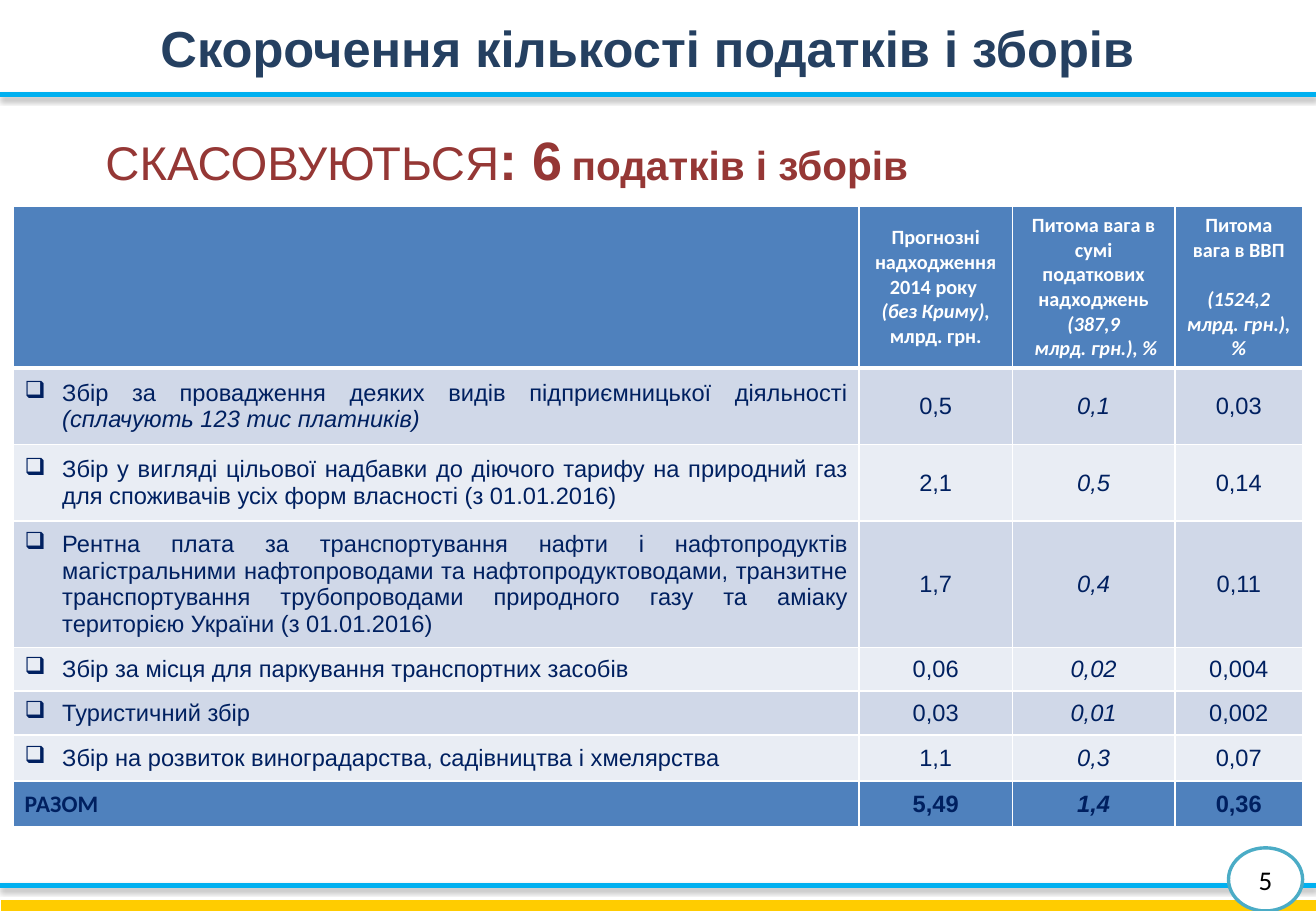
from dataclasses import dataclass

from lxml.etree import SubElement
from pptx import Presentation
from pptx.dml.color import RGBColor
from pptx.enum.shapes import MSO_CONNECTOR as Connector, MSO_SHAPE as Preset
from pptx.enum.text import MSO_ANCHOR as Anchor, MSO_AUTO_SIZE as AutoSize, PP_ALIGN as Align
from pptx.oxml.ns import qn
from pptx.util import Emu, Inches, Pt


@dataclass(frozen=True)
class Theme:
    sans: str = "Arial"
    table_head: str = "Calibri"
    navy: str = "254061"
    maroon: str = "953735"
    ink: str = "002060"
    sky: str = "00B0F0"
    yellow: str = "FFCC00"
    teal: str = "4BACC6"
    blue: str = "4F81BD"
    bands: tuple[str, str] = ("D0D8E8", "E9EDF4")
    white: str = "FFFFFF"
    black: str = "000000"
    title: int = 30
    count: int = 32
    lead: int = 28
    subject: int = 24
    gap: int = 20
    page: int = 16
    body: int = 14
    head: int = 12


THEME = Theme()
WIDTH, HEIGHT = Inches(10.83), Inches(7.5)


@dataclass(frozen=True)
class Style:
    size: int
    color: str
    font: str = THEME.sans
    bold: bool = False


@dataclass(frozen=True)
class Span:
    text: str
    style: Style
    italic: bool = False


@dataclass(frozen=True)
class Line:
    spans: tuple[Span, ...]
    align: Align = Align.CENTER
    before: float = 0
    bullet: bool = False


@dataclass(frozen=True)
class Levy:
    name: str
    figures: tuple[str, str, str]
    height: float
    note: str = ""


HEAD = Style(THEME.head, THEME.white, THEME.table_head, True)
BODY = Style(THEME.body, THEME.ink)
TOTAL = Style(THEME.body, THEME.ink, bold=True)
TOTAL_NAME = Style(THEME.body, THEME.ink, THEME.table_head, True)

COLUMNS = (64.27, 11.63, 12.37, 9.7)
HEAD_HEIGHT, TOTAL_HEIGHT = 17.73, 5.07
HEADINGS = (
    (),
    (
        Line((Span("Прогнозні надходження", HEAD),)),
        Line((Span("2014 року ", HEAD),)),
        Line((Span("(без Криму), ", HEAD, True), Span("млрд. грн.", HEAD))),
    ),
    (
        Line((Span("Питома вага в сумі податкових надходжень", HEAD),)),
        Line((Span("(387,9", HEAD, True),)),
        Line((Span(" млрд. грн.), %", HEAD, True),)),
    ),
    (
        Line((Span("Питома вага в ВВП", HEAD),)),
        Line((Span("(1524,2 млрд. грн.), %", HEAD, True),), before=14.6),
    ),
)
LEVIES = (
    Levy("Збір за провадження деяких видів підприємницької діяльності ",
         ("0,5", "0,1", "0,03"), 8.4, "(сплачують 123 тис платників)"),
    Levy("Збір у вигляді цільової надбавки до діючого тарифу на природний газ "
         "для споживачів усіх форм власності (з 01.01.2016)", ("2,1", "0,5", "0,14"), 8.4),
    Levy("Рентна плата за транспортування нафти і нафтопродуктів магістральними "
         "нафтопроводами та нафтопродуктоводами, транзитне транспортування "
         "трубопроводами природного газу та аміаку територією України (з 01.01.2016)",
         ("1,7", "0,4", "0,11"), 13.87),
    Levy("Збір за місця для паркування транспортних засобів", ("0,06", "0,02", "0,004"), 4.8),
    Levy("Туристичний збір", ("0,03", "0,01", "0,002"), 4.8),
    Levy("Збір на розвиток виноградарства, садівництва і хмелярства",
         ("1,1", "0,3", "0,07"), 5.07),
)


def across(share: float) -> Emu:
    return Emu(round(WIDTH * share / 100))


def down(share: float) -> Emu:
    return Emu(round(HEIGHT * share / 100))


def place(left: float, top: float, width: float, height: float) -> tuple[Emu, ...]:
    return across(left), down(top), across(width), down(height)


def rgb(color: str) -> RGBColor:
    return RGBColor.from_string(color)


def paint(fill, color: str) -> None:
    fill.solid()
    fill.fore_color.rgb = rgb(color)


def write(frame, lines: tuple[Line, ...]) -> None:
    for index, line in enumerate(lines):
        paragraph = frame.add_paragraph() if index else frame.paragraphs[0]
        paragraph.alignment = line.align
        paragraph.space_before = Pt(line.before)
        if line.bullet:
            props = paragraph._p.get_or_add_pPr()
            props.set("marL", str(across(2.86)))
            props.set("indent", str(-across(2.86)))
            SubElement(props, qn("a:buChar"), char="❑")
        for span in line.spans:
            run = paragraph.add_run()
            run.text = span.text
            run.font.name = span.style.font
            run.font.size = Pt(span.style.size)
            run.font.bold = span.style.bold
            run.font.italic = span.italic
            run.font.color.rgb = rgb(span.style.color)


def add_rule(slide, height: float) -> None:
    rule = slide.shapes.add_connector(
        Connector.STRAIGHT, 0, down(height), WIDTH, down(height))
    rule.line.color.rgb = rgb(THEME.sky)
    rule.line.width = Pt(3)
    effects = SubElement(rule._element.spPr, qn("a:effectLst"))
    shadow = SubElement(effects, qn("a:outerShdw"), blurRad=str(Pt(3.1)),
                        dist=str(Pt(1.8)), dir="5400000", rotWithShape="0")
    tint = SubElement(shadow, qn("a:srgbClr"), val=THEME.black)
    SubElement(tint, qn("a:alpha"), val="35000")


def fill_cell(cell, lines: tuple[Line, ...], color: str, bottom: int = 1) -> None:
    props = cell._tc.get_or_add_tcPr()
    for side, width in (("L", 1), ("R", 1), ("T", 1), ("B", bottom)):
        border = SubElement(props, qn(f"a:ln{side}"), w=str(Pt(width)))
        SubElement(SubElement(border, qn("a:solidFill")), qn("a:srgbClr"), val=THEME.white)
    paint(cell.fill, color)
    cell.vertical_anchor = Anchor.MIDDLE
    cell.margin_left = cell.margin_right = across(0.85)
    cell.margin_top = cell.margin_bottom = down(0.67)
    write(cell.text_frame, lines)


def figure_lines(figures: tuple[str, ...], style: Style) -> list[tuple[Line, ...]]:
    return [(Line((Span(figure, style, column == 1),)),)
            for column, figure in enumerate(figures)]


def levy_lines(levy: Levy) -> list[tuple[Line, ...]]:
    spans = (Span(levy.name, BODY),)
    if levy.note:
        spans += (Span(levy.note, BODY, True),)
    return [(Line(spans, Align.JUSTIFY, bullet=True),), *figure_lines(levy.figures, BODY)]


def add_levies(slide) -> None:
    heights = (HEAD_HEIGHT, *(levy.height for levy in LEVIES), TOTAL_HEIGHT)
    levies = slide.shapes.add_table(
        len(heights), len(COLUMNS), *place(1.02, 22.67, sum(COLUMNS), sum(heights))).table
    levies.horz_banding = False
    for column, width in zip(levies.columns, COLUMNS):
        column.width = across(width)
    for row, height in zip(levies.rows, heights):
        row.height = down(height)
    total = [(Line((Span("РАЗОМ", TOTAL_NAME),), Align.JUSTIFY),),
             *figure_lines(("5,49", "1,4", "0,36"), TOTAL)]
    contents = [HEADINGS, *map(levy_lines, LEVIES), total]
    last = len(contents) - 1
    for r, entries in enumerate(contents):
        color = THEME.blue if r in (0, last) else THEME.bands[(r - 1) % 2]
        for c, lines in enumerate(entries):
            fill_cell(levies.cell(r, c), lines, color, 1 if r else 3)


def main() -> None:
    deck = Presentation()
    deck.slide_width, deck.slide_height = WIDTH, HEIGHT
    slide = deck.slides.add_slide(deck.slide_layouts[5])

    heading = slide.shapes.title
    heading.left, heading.top, heading.width, heading.height = place(11.27, 0.53, 86.06, 9.6)
    heading.text_frame.auto_size = AutoSize.NONE
    heading.text_frame.vertical_anchor = Anchor.TOP
    heading.text_frame.margin_top = down(1.33)
    write(heading.text_frame, (Line((Span(
        "Скорочення кількості податків і зборів",
        Style(THEME.title, THEME.navy, bold=True)),), Align.LEFT),))

    abolished = slide.shapes.add_textbox(*place(7.11, 13.2, 81.72, 8.53)).text_frame
    abolished.word_wrap = True
    abolished.auto_size = AutoSize.SHAPE_TO_FIT_TEXT
    write(abolished, (Line((
        Span("СКАСОВУЮТЬСЯ", Style(THEME.lead, THEME.maroon)),
        Span(": 6", Style(THEME.count, THEME.maroon, bold=True)),
        Span(" ", Style(THEME.gap, THEME.maroon, bold=True)),
        Span("податків і зборів", Style(THEME.subject, THEME.maroon, bold=True)),
    ), Align.JUSTIFY),))

    for height in (10.4, 97.2):
        add_rule(slide, height)
    stripe = slide.shapes.add_shape(Preset.RECTANGLE, *place(0.09, 98.8, 99.91, 1.2))
    stripe.shadow.inherit = False
    paint(stripe.fill, THEME.yellow)
    stripe.line.fill.background()

    add_levies(slide)

    page = slide.shapes.add_shape(Preset.OVAL, *place(93.35, 93.07, 5.63, 6.93))
    page.shadow.inherit = False
    paint(page.fill, THEME.white)
    page.line.color.rgb = rgb(THEME.teal)
    page.line.width = Pt(2)
    page.text_frame.vertical_anchor = Anchor.MIDDLE
    write(page.text_frame, (Line((Span(
        "5", Style(THEME.page, THEME.black, THEME.table_head)),)),))

    deck.save("out.pptx")


if __name__ == "__main__":
    main()
